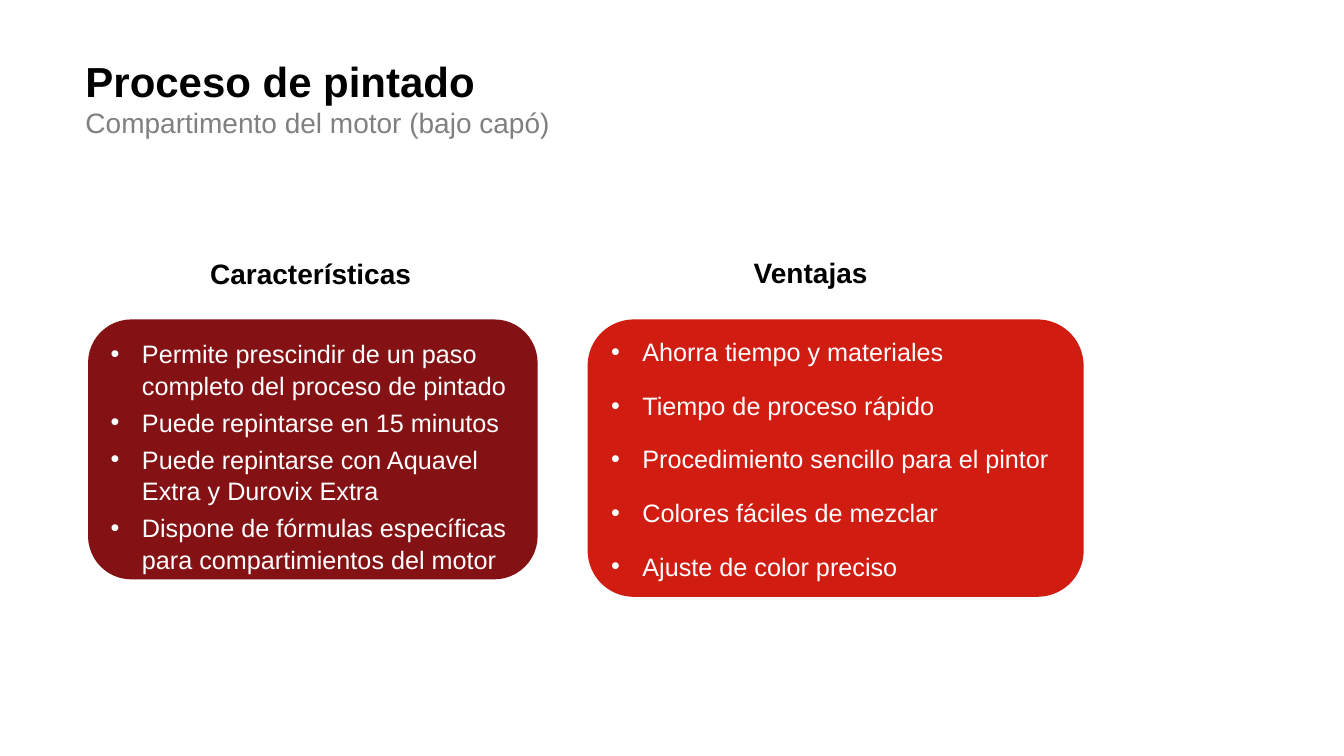
"""Build the slide comparing features and advantages of the painting process."""
from lxml import etree
from pptx import Presentation
from pptx import util as u
from pptx.dml.color import RGBColor
from pptx.enum import shapes, text
from pptx.oxml.ns import qn

TITLE = ("Proceso de pintado", "Compartimento del motor (bajo capó)")
TITLE_BOX = (1.9, 1.27, 23.5, 3.18)
COLUMNS = [
    {
        "heading": "Características",
        "heading_box": (1.9, 6.35, 11.86, 1.27),
        "card_box": (2.22, 8.05, 11.33, 6.55),
        "fill": "features",
        "anchor": text.MSO_ANCHOR.TOP,
        "space_after": 0,
        "points": [
            "Permite prescindir de un paso completo del proceso de pintado",
            "Puede repintarse en 15 minutos",
            "Puede repintarse con Aquavel Extra y Durovix Extra",
            "Dispone de fórmulas específicas para compartimientos del motor",
        ],
    },
    {
        "heading": "Ventajas",
        "heading_box": (14.5, 6.32, 11.86, 1.27),
        "card_box": (14.81, 8.05, 12.5, 6.99),
        "fill": "advantages",
        "anchor": text.MSO_ANCHOR.MIDDLE,
        "space_after": 12,
        "points": [
            "Ahorra tiempo y materiales",
            "Tiempo de proceso rápido",
            "Procedimiento sencillo para el pintor",
            "Colores fáciles de mezclar",
            "Ajuste de color preciso",
        ],
    },
]
THEME = {
    "font": "Arial",
    "colors": {
        "dark": RGBColor.from_string("000000"),
        "muted": RGBColor.from_string("808080"),
        "light": RGBColor.from_string("FFFFFF"),
        "features": RGBColor.from_string("841215"),
        "advantages": RGBColor.from_string("D11C12"),
    },
    "sizes": {"title": 30, "heading": 20, "point": 18},
}
POINT_INDENT = u.Cm(0.79)
POINT_GAP = 3.6


def set_all(target, **values):
    for name, value in values.items():
        setattr(target, name, value)


def lengths(box):
    return [u.Cm(value) for value in box]


def style_font(font, size, color, bold=False):
    set_all(font, name=THEME["font"], size=u.Pt(THEME["sizes"][size]), bold=bold)
    font.color.rgb = THEME["colors"][color]


def add_title(slide):
    shape = slide.shapes.title
    set_all(shape, **dict(zip(("left", "top", "width", "height"), lengths(TITLE_BOX))))
    frame = shape.text_frame
    set_all(frame, word_wrap=True, vertical_anchor=text.MSO_ANCHOR.TOP,
            auto_size=text.MSO_AUTO_SIZE.NONE)
    paragraph = frame.paragraphs[0]
    paragraph.alignment = text.PP_ALIGN.LEFT
    main, subtitle = TITLE
    run = paragraph.add_run()
    run.text = main
    style_font(run.font, "title", "dark", True)
    paragraph.add_line_break()
    run = paragraph.add_run()
    run.text = subtitle
    style_font(run.font, "heading", "muted")


def add_heading(slide, column):
    frame = slide.shapes.add_textbox(*lengths(column["heading_box"])).text_frame
    frame.word_wrap = True
    paragraph = frame.paragraphs[0]
    set_all(paragraph, text=column["heading"], alignment=text.PP_ALIGN.CENTER)
    style_font(paragraph.font, "heading", "dark", True)


def add_bullet(paragraph):
    properties = paragraph._p.get_or_add_pPr()
    properties.set("marL", str(POINT_INDENT))
    properties.set("indent", str(-POINT_INDENT))
    etree.SubElement(properties, qn("a:buFont"), typeface=THEME["font"])
    etree.SubElement(properties, qn("a:buChar"), char="•")


def add_card(slide, column):
    shape = slide.shapes.add_shape(
        shapes.MSO_SHAPE.ROUNDED_RECTANGLE, *lengths(column["card_box"]))
    shape.shadow.inherit = False
    shape.fill.solid()
    shape.fill.fore_color.rgb = THEME["colors"][column["fill"]]
    shape.line.fill.background()
    frame = shape.text_frame
    set_all(frame, word_wrap=True, vertical_anchor=column["anchor"])
    for index, point in enumerate(column["points"]):
        paragraph = frame.add_paragraph() if index else frame.paragraphs[0]
        add_bullet(paragraph)
        set_all(paragraph, text=point, alignment=text.PP_ALIGN.LEFT, line_spacing=1.05,
                space_before=u.Pt(POINT_GAP if index else 0),
                space_after=u.Pt(column["space_after"]))
        style_font(paragraph.font, "point", "light")


def main():
    presentation = Presentation()
    set_all(presentation, slide_width=u.Cm(33.87), slide_height=u.Cm(19.05))
    slide = presentation.slides.add_slide(presentation.slide_layouts[5])
    add_title(slide)
    for column in COLUMNS:
        add_heading(slide, column)
        add_card(slide, column)
    presentation.save("out.pptx")


if __name__ == "__main__":
    main()
